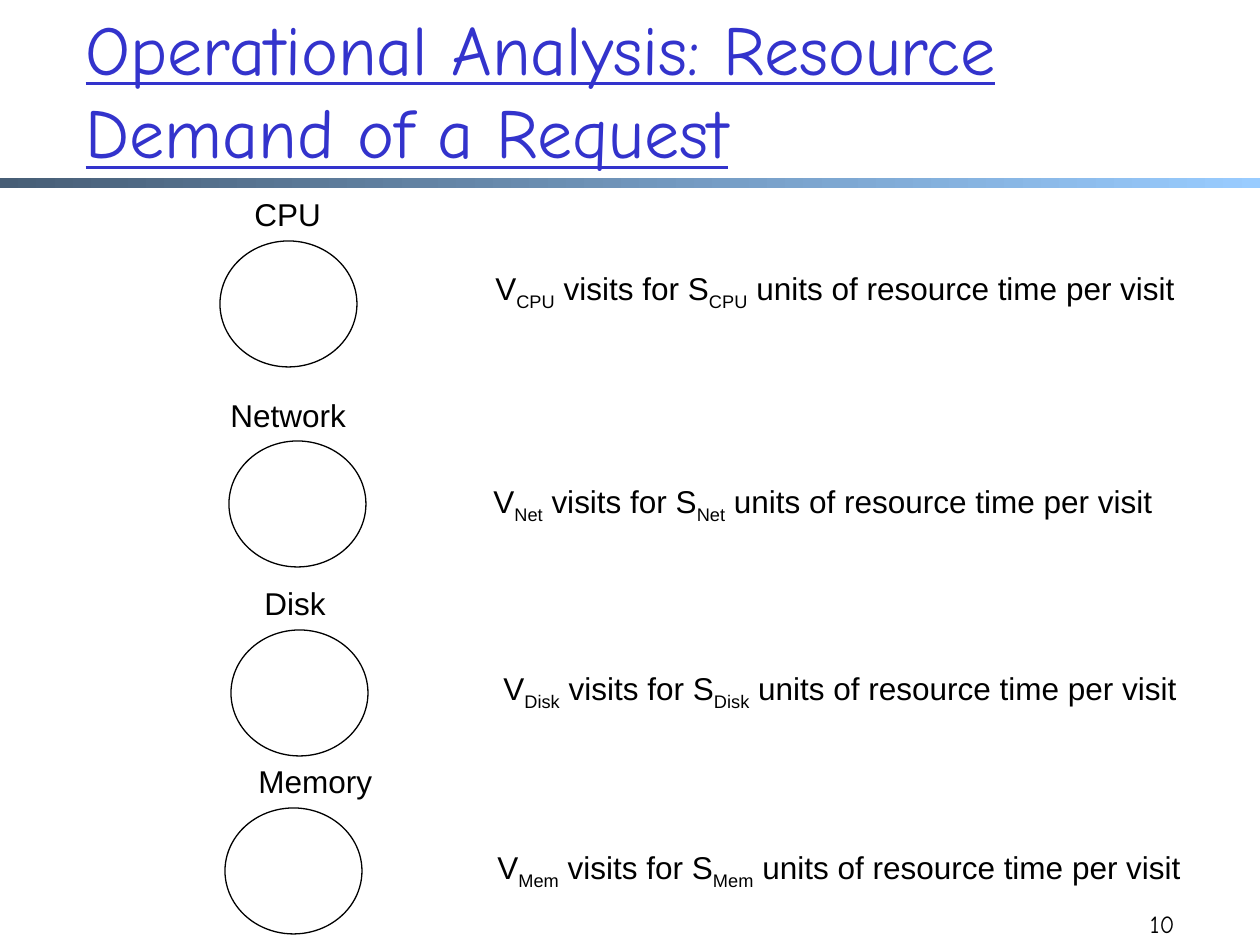
from pptx import Presentation
from pptx import util as u
from pptx.dml.color import RGBColor
from pptx.enum import shapes, text

PX = u.Inches(1) // 126
SLIDE = (1260, 945)
INK, PAPER, TITLE_BLUE = "000000", "FFFFFF", "3333CC"
BAR_STOPS = ("475E76", "99CCFF")
BODY_FONT, TITLE_FONT = "Arial", "Comic Neue"
CIRCLE = (137, 126)
LABEL_HEIGHT = 50

TITLE = "Operational Analysis: Resource Demand of a Request"
# label, subscript, label (x, y, width, wrap), circle (x, y), sentence (x, y, width)
RESOURCES = [
    ("CPU", "CPU", (242, 189, 116, True), (220, 241), (483, 263, 746)),
    ("Network", "Net", (218, 390, 142, False), (229, 441), (481, 476, 717)),
    ("Disk", "Disk", (252, 578, 87, False), (231, 630), (491, 663, 734)),
    ("Memory", "Mem", (246, 756, 140, False), (225, 808), (485, 842, 745)),
]


def rgb(value):
    return RGBColor.from_string(value)


def px(*values):
    return [v * PX for v in values]


def style(p, font, size, color):
    p.font.name, p.font.size = font, u.Pt(size)
    p.font.color.rgb = rgb(color)


def add_text(slide, x, y, w, h, pieces, wrap=False, font=BODY_FONT, size=18):
    """Add a one-line text box; every second piece is a subscript."""
    tf = slide.shapes.add_textbox(*px(x, y, w, h)).text_frame
    tf.word_wrap = wrap
    p = tf.paragraphs[0]
    style(p, font, size, INK)
    for i, piece in enumerate(pieces):
        r = p.add_run()
        r.text = piece
        if i % 2:
            r.font._element.set("baseline", "-25000")
    return tf


def add_shape(slide, kind, x, y, w, h):
    sp = slide.shapes.add_shape(kind, *px(x, y, w, h))
    sp.shadow.inherit = False
    return sp


def add_bar(slide):
    bar = add_shape(slide, shapes.MSO_SHAPE.RECTANGLE, 0, 178, SLIDE[0], 10)
    bar.line.fill.background()
    bar.fill.gradient()
    bar.fill.gradient_angle = 0
    for stop, color in zip(bar.fill.gradient_stops, BAR_STOPS):
        stop.color.rgb = rgb(color)


def add_title(slide):
    sp = slide.shapes.title
    sp.left, sp.top, sp.width, sp.height = px(73, 10, 1071, 158)
    tf = sp.text_frame
    tf.text = TITLE
    tf.word_wrap = True
    tf.auto_size = text.MSO_AUTO_SIZE.NONE
    tf.vertical_anchor = text.MSO_ANCHOR.MIDDLE
    p = tf.paragraphs[0]
    p.alignment = text.PP_ALIGN.LEFT
    p.font.underline = True
    style(p, TITLE_FONT, 40, TITLE_BLUE)


def add_resource(slide, name, sub, label, circle, sentence):
    x, y, w, wrap = label
    add_text(slide, x, y, w, LABEL_HEIGHT, [name], wrap)
    sp = add_shape(slide, shapes.MSO_SHAPE.OVAL, *circle, *CIRCLE)
    sp.fill.solid()
    sp.fill.fore_color.rgb = rgb(PAPER)
    sp.line.color.rgb = rgb(INK)
    sp.line.width = u.Pt(0.75)
    pieces = ["V", sub, " visits for S", sub, " units of resource time per visit"]
    add_text(slide, *sentence, LABEL_HEIGHT, pieces)


def main():
    prs = Presentation()
    prs.slide_width, prs.slide_height = px(*SLIDE)
    slide = prs.slides.add_slide(prs.slide_layouts[5])
    add_bar(slide)
    add_title(slide)
    for resource in RESOURCES:
        add_resource(slide, *resource)
    number = add_text(slide, 641, 882, 546, 63, ["10"], True, TITLE_FONT, 14)
    number.vertical_anchor = text.MSO_ANCHOR.BOTTOM
    number.paragraphs[0].alignment = text.PP_ALIGN.RIGHT
    prs.save("out.pptx")


if __name__ == "__main__":
    main()
